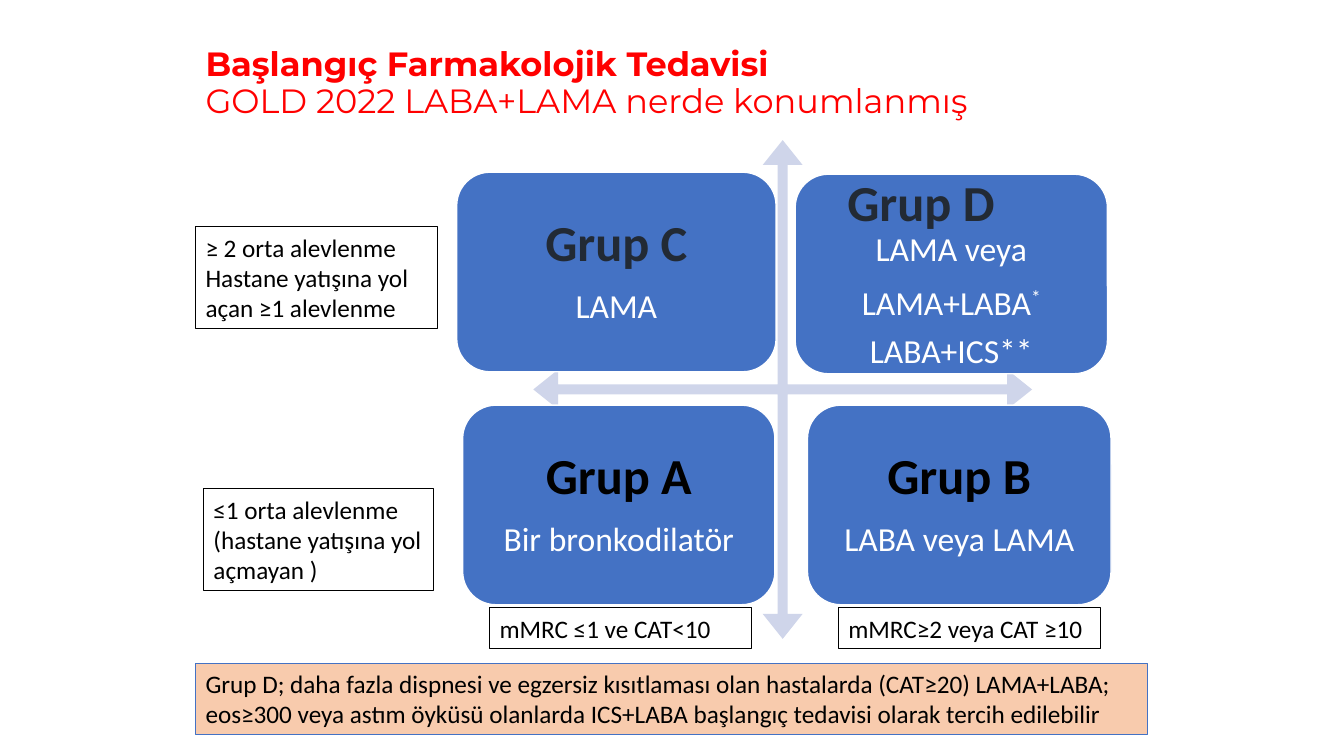
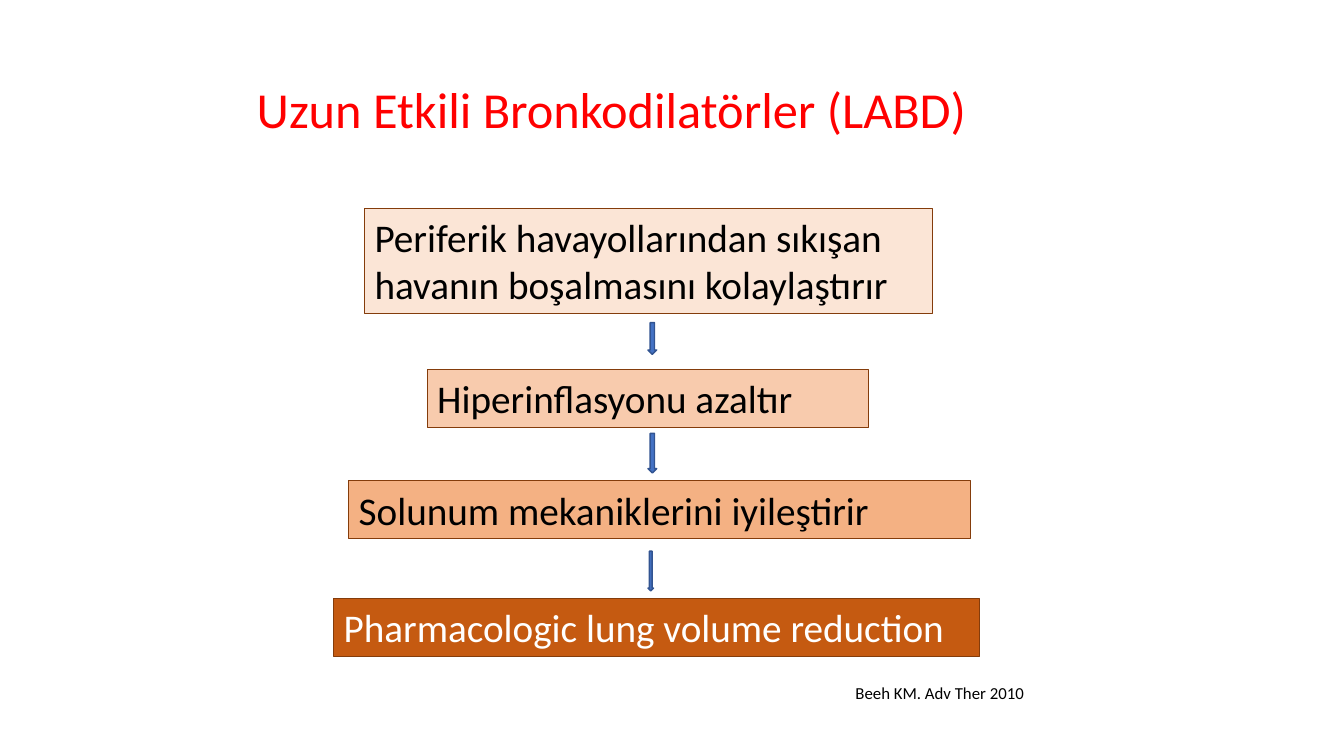
from pptx import Presentation
from pptx.dml.color import RGBColor
from pptx.enum.shapes import MSO_SHAPE
from pptx.enum.text import MSO_ANCHOR, PP_ALIGN
from pptx.util import Cm, Pt

RECT, ROUND = MSO_SHAPE.RECTANGLE, MSO_SHAPE.ROUNDED_RECTANGLE
QUAD, DOWN = MSO_SHAPE.QUAD_ARROW, MSO_SHAPE.DOWN_ARROW
TOP, MIDDLE = MSO_ANCHOR.TOP, MSO_ANCHOR.MIDDLE
LEFT, CENTER = PP_ALIGN.LEFT, PP_ALIGN.CENTER

BLACK, WHITE, RED, BLUE = "000000", "FFFFFF", "FF0000", "4472C4"
SLATE, PALE, NAVY, BROWN = "222A35", "CFD5EA", "325491", "843C0B"
PEACH = "F8CBAD"


def add_box(s, kind, at, fill=None, line=None, width=0.75):
    """Add a preset shape, or a plain text box when kind is None."""
    at = [Cm(v) for v in at]
    if kind is None:
        sp = s.shapes.add_textbox(*at)
    else:
        sp = s.shapes.add_shape(kind, *at)
        sp.shadow.inherit = False
        if fill:
            sp.fill.solid()
            sp.fill.fore_color.rgb = RGBColor.from_string(fill)
        else:
            sp.fill.background()
        if line:
            sp.line.color.rgb = RGBColor.from_string(line)
            sp.line.width = Pt(width)
        else:
            sp.line.fill.background()
    sp.text_frame.word_wrap = True
    sp.text_frame.vertical_anchor = TOP
    return sp


def add_run(p, text, size, color=BLACK, bold=False, font="Calibri"):
    r = p.add_run()
    r.text = text
    r.font.name, r.font.size, r.font.bold = font, Pt(size), bold
    r.font.color.rgb = RGBColor.from_string(color)
    return r


prs = Presentation()
prs.slide_width, prs.slide_height = Cm(33.87), Cm(19.05)

# Title line: text, size, bold, font
TITLES = [
    ((4.93, 0.53, 25.22, 3.18),
     [("Başlangıç Farmakolojik Tedavisi", 24, True, "Montserrat"),
      ("GOLD 2022 LABA+LAMA nerde konumlanmış", 24, False, "Montserrat")]),
    ((6.22, 0.98, 21.03, 3.68),
     [("Uzun Etkili Bronkodilatörler (LABD)", 36, False, "Calibri")]),
]
slides = []
for at, lines in TITLES:
    s = prs.slides.add_slide(prs.slide_layouts[6])
    tf = add_box(s, None, at).text_frame
    tf.vertical_anchor = MIDDLE
    p = tf.paragraphs[0]
    p.line_spacing = 0.9
    for i, (text, size, bold, font) in enumerate(lines):
        if i:
            p.add_line_break()
        add_run(p, text, size, RED, bold, font)
    slides.append(s)
matrix, chain = slides

# Slide 1: cross of arrows behind the four groups
cross = add_box(matrix, QUAD, (13.44, 3.53, 12.57, 12.57), PALE)
for i, value in enumerate((0.02, 0.04, 0.05)):
    cross.adjustments[i] = value

# Groups: left, top, width, name, name colour, treatments
GROUPS = [
    (11.51, 4.34, 8.05, "Grup C", SLATE, ["LAMA"]),
    (20.04, 4.39, 7.87, "Grup D", SLATE,
     ["LAMA veya", "LAMA+LABA*", "LABA+ICS**"]),
    (11.66, 10.21, 7.87, "Grup A", BLACK, ["Bir bronkodilatör"]),
    (20.35, 10.21, 7.65, "Grup B", BLACK, ["LABA veya LAMA"]),
]
for left, top, width, name, color, treatments in GROUPS:
    sp = add_box(matrix, ROUND, (left, top, width, 5.03), BLUE, WHITE, 1)
    tf = sp.text_frame
    tf.vertical_anchor = MIDDLE
    tf.margin_left = tf.margin_right = Cm(0.62)
    tf.margin_top = tf.margin_bottom = Cm(0.62)
    crowded = len(treatments) > 1
    p = tf.paragraphs[0]
    p.alignment = LEFT if crowded else CENTER
    p.line_spacing = 0.9
    p.space_after = Pt(0 if crowded else 12.6)
    if crowded:
        p._p.get_or_add_pPr().set("marL", str(Cm(0.45)))
    add_run(p, name, 36, color, True)
    for i, text in enumerate(treatments):
        p = tf.add_paragraph()
        p.alignment, p.line_spacing = CENTER, 0.9
        p.space_after = Pt(12.6 if i == 0 else 8.4)
        if text == "LAMA+LABA*":
            add_run(p, text[:-1], 24, WHITE)
            star = add_run(p, "*", 24, WHITE)
            star.font._element.set("baseline", "30000")
        else:
            add_run(p, text, 24, WHITE)

# Criteria and footnote
NOTES = [
    ((4.93, 5.72, 6.1, 2.57), WHITE, BLACK,
     ["≥ 2 orta alevlenme", "Hastane yatışına yol açan ≥1 alevlenme"]),
    ((5.13, 12.32, 5.79, 2.57), None, BLACK,
     ["≤1 orta alevlenme (hastane yatışına yol açmayan )"]),
    ((12.34, 15.32, 6.6, 1.02), None, BLACK, ["mMRC ≤1 ve CAT<10"]),
    ((21.13, 15.32, 6.6, 1.02), None, BLACK, ["mMRC≥2 veya CAT ≥10"]),
    ((4.93, 16.71, 24.0, 1.8), PEACH, BLUE,
     ["Grup D; daha fazla dispnesi ve egzersiz kısıtlaması olan hastalarda "
      "(CAT≥20) LAMA+LABA; eos≥300 veya astım öyküsü olanlarda ICS+LABA "
      "başlangıç tedavisi olarak tercih edilebilir"]),
]
for at, fill, line, texts in NOTES:
    tf = add_box(matrix, RECT, at, fill, line).text_frame
    for i, text in enumerate(texts):
        p = tf.add_paragraph() if i else tf.paragraphs[0]
        p.alignment = LEFT
        add_run(p, text, 18)

# Slide 2: chain of effects
STEPS = [
    ((9.19, 5.26, 14.3, 2.64), "FBE5D6", BLACK,
     "Periferik havayollarından sıkışan havanın boşalmasını kolaylaştırır"),
    ((10.77, 9.32, 11.13, 1.45), PEACH, BLACK, "Hiperinflasyonu azaltır"),
    ((8.79, 12.12, 15.67, 1.45), "F4B183", BLACK,
     "Solunum mekaniklerini iyileştirir"),
    ((8.41, 15.09, 16.28, 1.45), "C55A11", WHITE,
     "Pharmacologic lung volume reduction"),
]
for at, fill, color, text in STEPS:
    p = add_box(chain, RECT, at, fill, BROWN).text_frame.paragraphs[0]
    p.alignment = LEFT
    add_run(p, text, 28, color)

# Arrows between the steps: top, width, height
for top, width, height in ((8.13, 0.22, 0.8), (10.92, 0.22, 1), (13.89, 0.14, 1)):
    add_box(chain, DOWN, (16.33, top, width, height), BLUE, NAVY, 1)

# Citation
p = add_box(chain, None, (21.31, 17.07, 5.94, 0.76)).text_frame.paragraphs[0]
add_run(p, "Beeh KM. Adv Ther 2010", 12)

prs.save("out.pptx")
